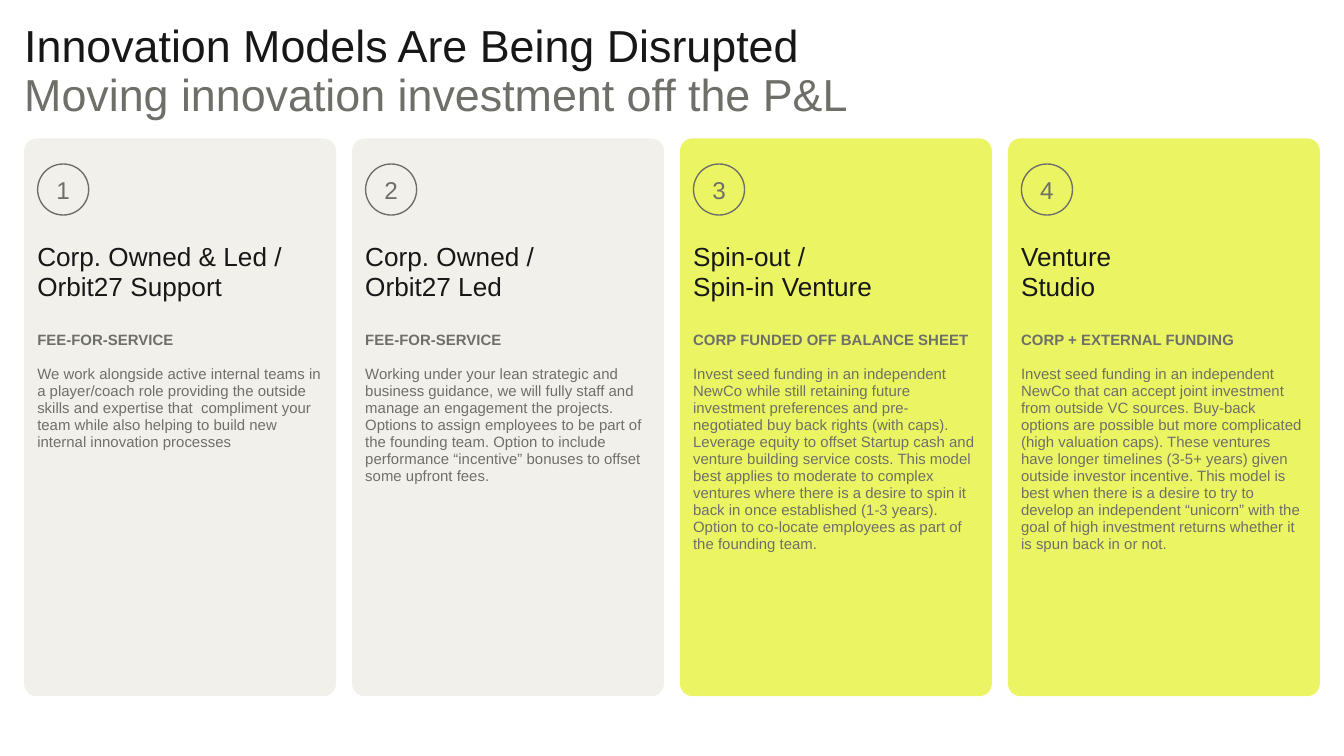
from dataclasses import dataclass

from pptx import Presentation
from pptx import util as u
from pptx.dml import color
from pptx.enum import shapes, text
from pptx.oxml import ns
from lxml import etree


@dataclass(frozen=True)
class Theme:
    font: str = "Arial"
    ink: str = "171717"
    muted: str = "6F6F69"
    stone: str = "EDEBE2"
    lime: str = "E3F121"
    opacity: int = 70
    title_size: int = 24
    heading_size: int = 14
    number_size: int = 13
    body_size: int = 8


CARDS = [
    ("Corp. Owned & Led / Orbit27 Support", "FEE-FOR-SERVICE", "stone",
     "We work alongside active internal teams in a player/coach role providing the outside "
     "skills and expertise that  compliment your team while also helping to build new "
     "internal innovation processes"),
    ("Corp. Owned / \vOrbit27 Led", "FEE-FOR-SERVICE", "stone",
     "Working under your lean strategic and business guidance, we will fully staff and "
     "manage an engagement the projects. Options to assign employees to be part of the "
     "founding team. Option to include performance “incentive” bonuses to offset some "
     "upfront fees."),
    ("Spin-out /\vSpin-in Venture", "CORP FUNDED OFF BALANCE SHEET", "lime",
     "Invest seed funding in an independent NewCo while still retaining future investment "
     "preferences and pre-negotiated buy back rights (with caps). Leverage equity to offset "
     "Startup cash and venture building service costs. This model best applies to moderate "
     "to complex ventures where there is a desire to spin it back in once established "
     "(1-3 years). Option to co-locate employees as part of the founding team."),
    ("Venture\vStudio", "CORP + EXTERNAL FUNDING", "lime",
     "Invest seed funding in an independent NewCo that can accept joint investment from "
     "outside VC sources. Buy-back options are possible but more complicated (high valuation "
     "caps). These ventures have longer timelines (3-5+ years) given outside investor "
     "incentive. This model is best when there is a desire to try to develop an independent "
     "“unicorn” with the goal of high investment returns whether it is spun back in or not."),
]
CARD_LEFT, CARD_TOP, CARD_PITCH = 0.18, 1.03, 2.44
CARD_WIDTH, CARD_HEIGHT = 2.32, 4.15
BADGE_INSET, BADGE_TOP, BADGE_SIZE = 0.1, 1.22, 0.38


def write(paragraph, content, *, font, size, ink, bold=False, align=text.PP_ALIGN.LEFT,
          spacing=1.0, before=0):
    """Fill a paragraph with formatted text."""
    paragraph.text = content
    paragraph.alignment = align
    paragraph.line_spacing = spacing
    paragraph.space_before = u.Pt(before)
    for run in paragraph.runs:
        run.font.name = font
        run.font.size = u.Pt(size)
        run.font.bold = bold
        run.font.color.rgb = color.RGBColor.from_string(ink)


class SlideBuilder:
    """Hold the theme and the slide, and add each kind of element."""

    def __init__(self, slide, theme):
        self.slide = slide
        self.theme = theme

    def frame(self, shape, anchor, side=0.0, top=0.0):
        """Prepare a wrapped text frame with the given insets."""
        frame = shape.text_frame
        frame.word_wrap = True
        frame.auto_size = text.MSO_AUTO_SIZE.NONE
        frame.vertical_anchor = anchor
        frame.margin_left = frame.margin_right = frame.margin_bottom = u.Inches(side)
        frame.margin_top = u.Inches(top)
        return frame

    def shape(self, kind, left, top, width, height):
        """Add a preset shape without a shadow."""
        shape = self.slide.shapes.add_shape(kind, *map(u.Inches, (left, top, width, height)))
        shape.shadow.inherit = False
        return shape

    def title(self, headline, subtitle):
        """Place the two-tone title."""
        title = self.slide.shapes.title
        title.left, title.top, title.width, title.height = map(u.Inches, (0.18, 0.18, 6.42, 1.09))
        frame = self.frame(title, text.MSO_ANCHOR.TOP)
        style = dict(font=self.theme.font, size=self.theme.title_size, spacing=0.9)
        write(frame.paragraphs[0], headline, ink=self.theme.ink, **style)
        write(frame.add_paragraph(), subtitle, ink=self.theme.muted, **style)

    def card(self, left, heading, funding, fill, body):
        """Add a translucent rounded card with its three text levels."""
        theme = self.theme
        card = self.shape(shapes.MSO_SHAPE.ROUNDED_RECTANGLE, left, CARD_TOP,
                          CARD_WIDTH, CARD_HEIGHT)
        card.adjustments[0] = 0.04
        card.line.fill.background()
        card.fill.solid()
        card.fill.fore_color.rgb = color.RGBColor.from_string(getattr(theme, fill))
        tint = card.fill._xPr.find(ns.qn("a:solidFill"))[0]
        etree.SubElement(tint, ns.qn("a:alpha")).set("val", str(theme.opacity * 1000))
        frame = self.frame(card, text.MSO_ANCHOR.TOP, side=0.07, top=0.75)
        style = dict(font=theme.font, spacing=0.95)
        write(frame.paragraphs[0], heading, size=theme.heading_size, ink=theme.ink, **style)
        write(frame.add_paragraph(), funding, size=theme.body_size, ink=theme.muted,
              bold=True, before=16, **style)
        write(frame.add_paragraph(), body, size=theme.body_size, ink=theme.muted,
              before=9, **style)

    def badge(self, left, number):
        """Add a numbered outline circle."""
        theme = self.theme
        badge = self.shape(shapes.MSO_SHAPE.OVAL, left, BADGE_TOP, BADGE_SIZE, BADGE_SIZE)
        badge.fill.background()
        badge.line.color.rgb = color.RGBColor.from_string(theme.muted)
        badge.line.width = u.Pt(0.75)
        frame = self.frame(badge, text.MSO_ANCHOR.MIDDLE)
        write(frame.paragraphs[0], str(number), font=theme.font, size=theme.number_size,
              ink=theme.muted, align=text.PP_ALIGN.CENTER)


def main():
    """Build and save the presentation."""
    presentation = Presentation()
    presentation.slide_width = u.Inches(10)
    presentation.slide_height = presentation.slide_width * 9 // 16
    slide = presentation.slides.add_slide(presentation.slide_layouts[5])
    builder = SlideBuilder(slide, Theme())
    builder.title("Innovation Models Are Being Disrupted",
                  "Moving innovation investment off the P&L")
    for index, card in enumerate(CARDS):
        left = CARD_LEFT + index * CARD_PITCH
        builder.card(left, *card)
        builder.badge(left + BADGE_INSET, index + 1)
    presentation.save("out.pptx")


if __name__ == "__main__":
    main()
